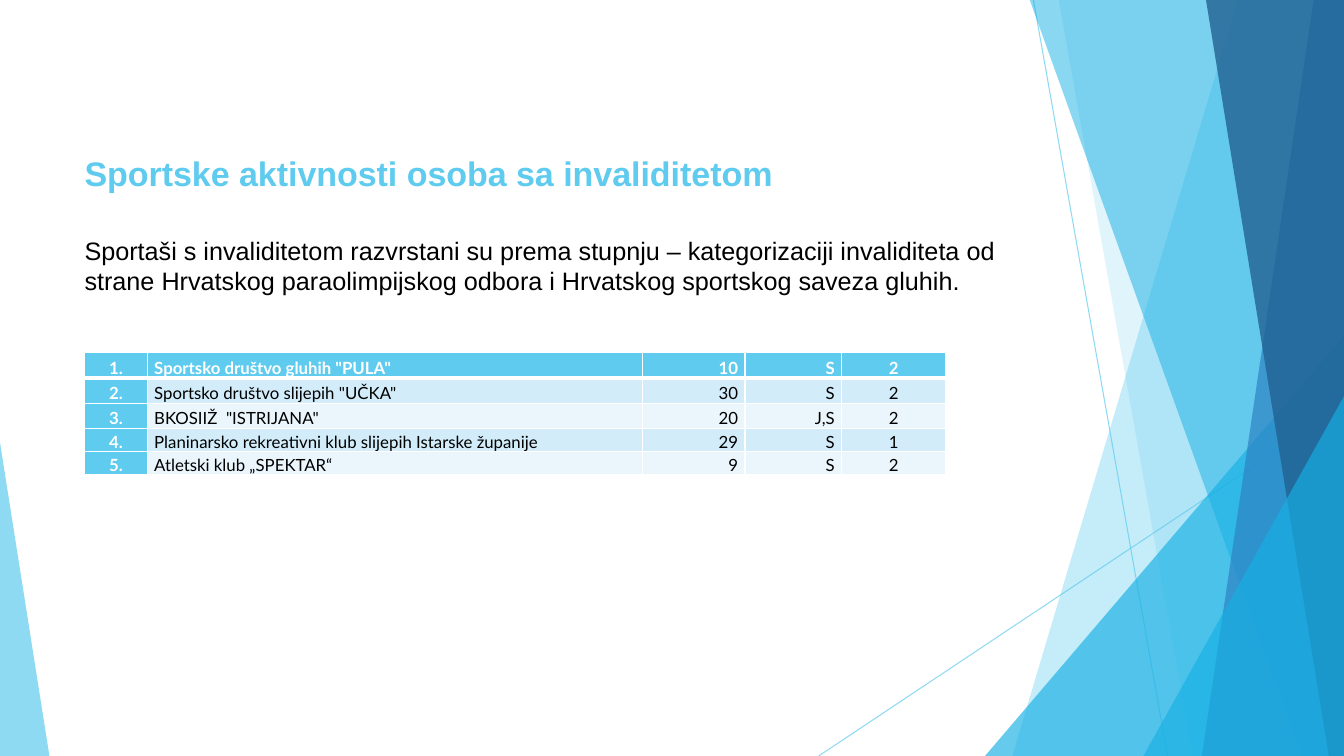
from lxml import etree
from pptx import Presentation
from pptx.dml.color import RGBColor
from pptx.enum.shapes import MSO_CONNECTOR, MSO_SHAPE
from pptx.enum.text import MSO_ANCHOR, PP_ALIGN
from pptx.oxml.ns import qn
from pptx.util import Inches, Pt

STRAIGHT = MSO_CONNECTOR.STRAIGHT
TRIANGLE = MSO_SHAPE.ISOSCELES_TRIANGLE
BOTTOM = MSO_ANCHOR.BOTTOM
LEFT, CENTER, RIGHT = PP_ALIGN.LEFT, PP_ALIGN.CENTER, PP_ALIGN.RIGHT

WIDTH, HEIGHT = 13.33, 7.5
COLORS = {
    "sky": "5FCBEF",
    "cyan": "17B0E4",
    "blue": "2E83C3",
    "navy": "226292",
    "band": "D2ECF9",
    "pale": "EAF6FC",
    "white": "FFFFFF",
    "black": "000000",
}
TITLE = "Sportske aktivnosti osoba sa invaliditetom"
BODY = (
    "Sportaši s invaliditetom razvrstani su prema stupnju – kategorizaciji "
    "invaliditeta od strane Hrvatskog paraolimpijskog odbora i Hrvatskog "
    "sportskog saveza gluhih."
)
CLUBS = [
    ("1.", 'Sportsko društvo gluhih "PULA"', "10", "S", "2"),
    ("2.", 'Sportsko društvo slijepih "UČKA"', "30", "S", "2"),
    ("3.", 'BKOSIIŽ  "ISTRIJANA"', "20", "J,S", "2"),
    ("4.", "Planinarsko rekreativni klub slijepih Istarske županije", "29", "S", "1"),
    ("5.", "Atletski klub „SPEKTAR“", "9", "S", "2"),
]
COLUMN_WIDTHS = [0.62, 4.91, 1.02, 0.96, 1.03]
COLUMN_ALIGNMENTS = [CENTER, LEFT, RIGHT, RIGHT, CENTER]
ROW_HEIGHTS = [0.25, 0.25, 0.25, 0.23, 0.23]


def rgb(name):
    """Return the palette colour with the given name."""
    return RGBColor.from_string(COLORS[name])


def set_alpha(fill_parent, percent):
    """Set the opacity of the solid fill found under an element."""
    color = fill_parent.find(".//" + qn("a:srgbClr"))
    etree.SubElement(color, qn("a:alpha")).set("val", str(percent * 1000))


def write_text(paragraph, text, size=12, font="Lato", color="black", bold=False,
               align=LEFT, line_spacing=None, space_before=0):
    """Write formatted text into a paragraph."""
    paragraph.alignment = align
    paragraph.line_spacing = line_spacing
    paragraph.space_before = Pt(space_before)
    run = paragraph.add_run()
    run.text = text
    run.font.size = Pt(size)
    run.font.name = font
    run.font.bold = bold
    run.font.color.rgb = rgb(color)


def paint(shape, color, alpha):
    """Give a shape a translucent fill without outline or shadow."""
    shape.shadow.inherit = False
    shape.fill.solid()
    shape.fill.fore_color.rgb = rgb(color)
    set_alpha(shape._element.spPr, alpha)
    shape.line.fill.background()


def add_ray(slide, start, end):
    """Draw a thin translucent line between two points."""
    ray = slide.shapes.add_connector(STRAIGHT, *map(Inches, start + end))
    ray.line.color.rgb = rgb("sky")
    ray.line.width = Pt(0.75)
    properties = ray._element.spPr
    set_alpha(properties, 70)
    etree.SubElement(properties, qn("a:effectLst"))


def add_facet(slide, top_left, bottom_left, right, bottom, color, alpha):
    """Draw a slanted band that reaches the right edge."""
    top = -0.01
    points = [(top_left, top), (right, top), (right, bottom), (bottom_left, bottom)]
    corners = [(Inches(x), Inches(y)) for x, y in points]
    builder = slide.shapes.build_freeform(*corners[0], scale=1.0)
    builder.add_line_segments(corners[1:], close=True)
    paint(builder.convert_to_shape(), color, alpha)


def add_wedge(slide, left, top, width, bottom, apex, color, alpha):
    """Draw a right triangle whose apex lies on one side of its box."""
    box = (left, top, width, bottom - top)
    wedge = slide.shapes.add_shape(TRIANGLE, *map(Inches, box))
    wedge.adjustments[0] = apex
    paint(wedge, color, alpha)


def add_backdrop(slide, width, height):
    """Draw the crystal pattern along the slide's edges."""
    add_ray(slide, (10.25, 0), (11.58, height))
    add_ray(slide, (width, 4.03), (8.12, height))
    add_facet(slide, 12.28, 10.04, width, height, "sky", 36)
    add_facet(slide, 10.5, 11.83, width, height, "sky", 20)
    add_wedge(slide, 9.77, 3.33, width - 9.77, height, 1, "cyan", 66)
    add_facet(slide, 10.21, 12.91, width, height, "cyan", 50)
    add_facet(slide, 13.03, 11.92, width, height, "blue", 70)
    add_facet(slide, 11.96, 13.18, width, height, "navy", 80)
    add_wedge(slide, 11.34, 3.93, width - 11.34, height, 1, "cyan", 66)
    add_wedge(slide, 0, 4.39, 0.49, height, 0, "sky", 70)


def add_heading(slide, left, top, width, height):
    """Place the title and the introduction in one box."""
    box = slide.shapes.add_textbox(*map(Inches, (left, top, width, height)))
    frame = box.text_frame
    frame.word_wrap = True
    frame.vertical_anchor = BOTTOM
    write_text(frame.paragraphs[0], TITLE, size=24.3, font="Arial", color="sky", bold=True)
    write_text(frame.add_paragraph(), BODY, size=18, font="Arial", space_before=30)


def set_borders(cell, top, bottom):
    """Draw white cell borders with the given top and bottom widths."""
    properties = cell._tc.get_or_add_tcPr()
    for side, width in (("L", 1), ("R", 1), ("T", top), ("B", bottom)):
        line = etree.SubElement(properties, qn("a:ln" + side), w=str(Pt(width)))
        fill = etree.SubElement(line, qn("a:solidFill"))
        etree.SubElement(fill, qn("a:srgbClr"), val=COLORS["white"])


def add_club_table(slide, left, top):
    """Place the table of clubs."""
    box = (left, top, sum(COLUMN_WIDTHS), sum(ROW_HEIGHTS))
    table = slide.shapes.add_table(
        len(CLUBS), len(COLUMN_WIDTHS), *map(Inches, box)).table
    for column, width in zip(table.columns, COLUMN_WIDTHS):
        column.width = Inches(width)
    for row, height in zip(table.rows, ROW_HEIGHTS):
        row.height = Inches(height)
    for row_index, club in enumerate(CLUBS):
        for column_index, text in enumerate(club):
            cell = table.cell(row_index, column_index)
            strong = row_index == 0 or column_index == 0
            band = "band" if row_index % 2 else "pale"
            set_borders(cell, 3 if row_index == 1 else 1, 3 if row_index == 0 else 1)
            cell.fill.solid()
            cell.fill.fore_color.rgb = rgb("sky" if strong else band)
            cell.vertical_anchor = BOTTOM
            cell.margin_left = cell.margin_right = Inches(0.07)
            cell.margin_top = cell.margin_bottom = 0
            write_text(cell.text_frame.paragraphs[0], text, bold=strong,
                       color="white" if strong else "black",
                       align=COLUMN_ALIGNMENTS[column_index], line_spacing=1.15)


def main():
    """Build and save the presentation."""
    presentation = Presentation()
    presentation.slide_width = Inches(WIDTH)
    presentation.slide_height = Inches(HEIGHT)
    slide = presentation.slides.add_slide(presentation.slide_layouts[6])
    add_backdrop(slide, WIDTH, HEIGHT)
    add_heading(slide, 0.74, 0.67, 9.4, 2.31)
    add_club_table(slide, 0.84, 3.5)
    presentation.save("out.pptx")


if __name__ == "__main__":
    main()
